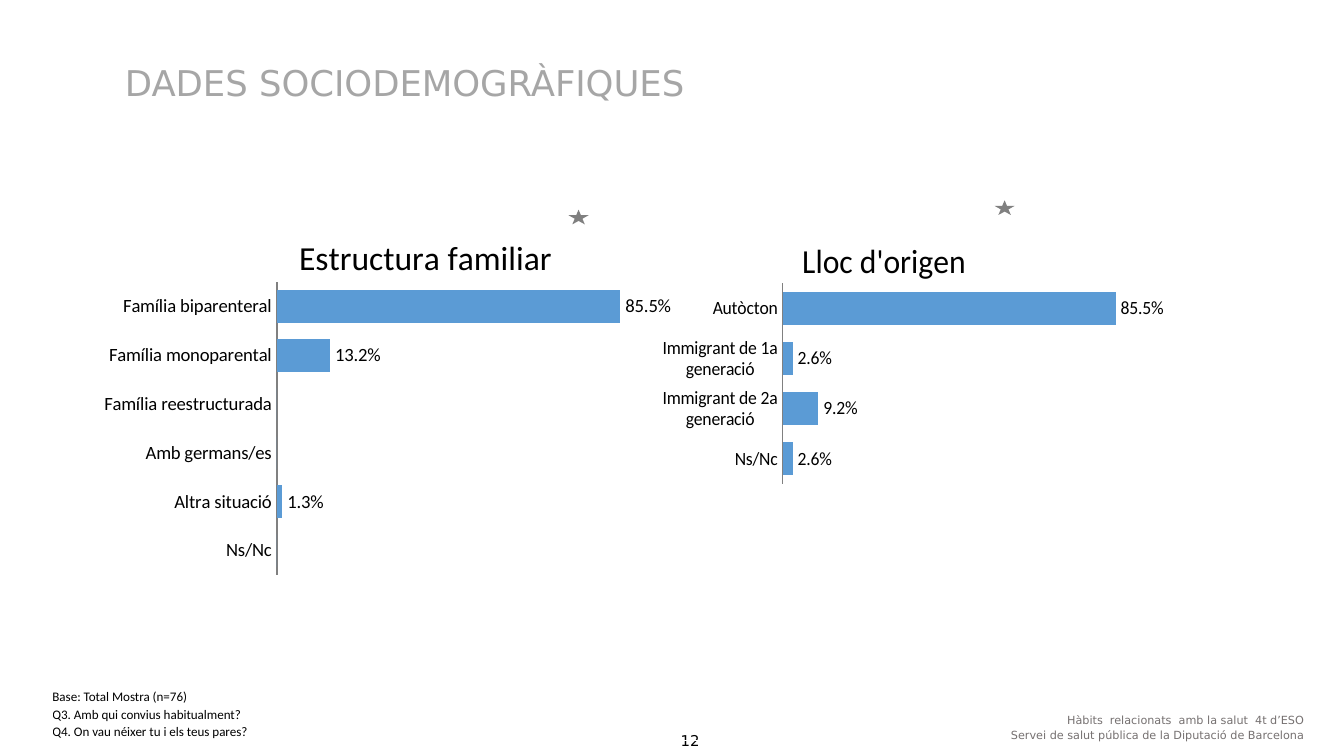
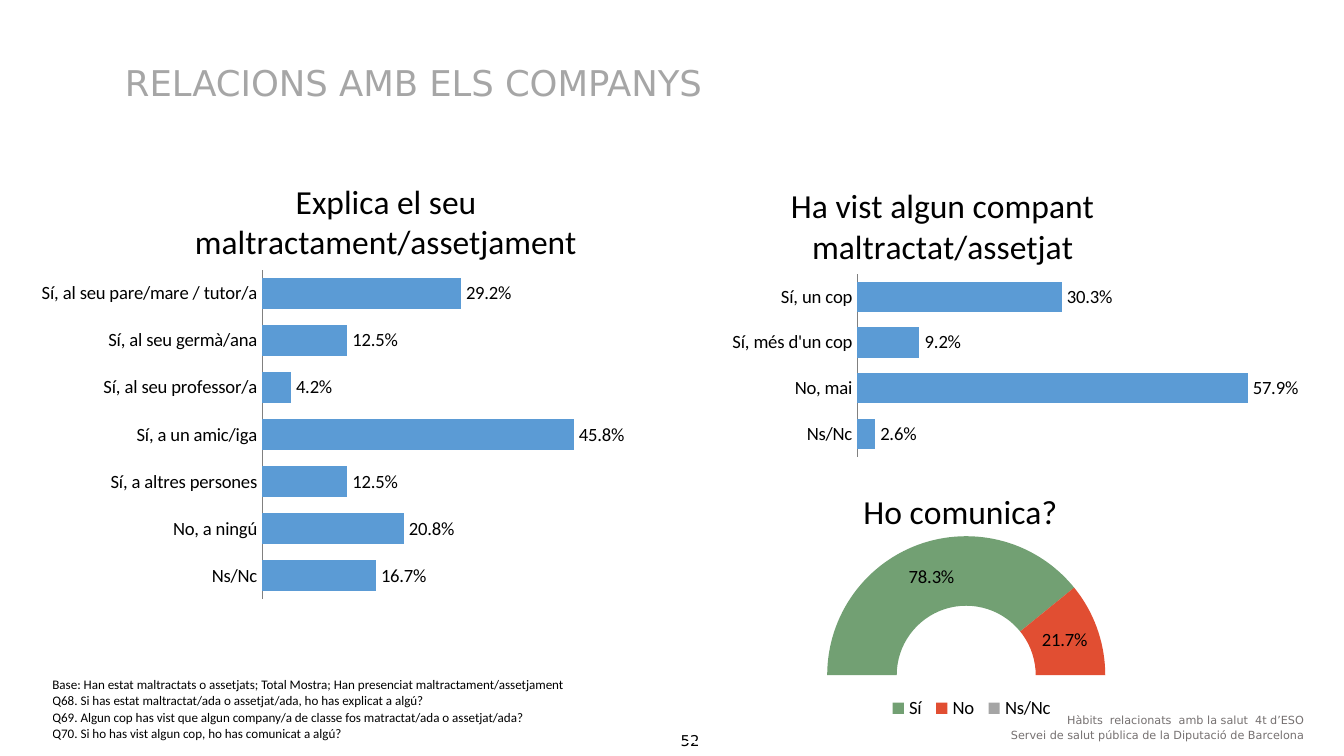
"""Builds two survey slides with bar charts, a half doughnut and source notes."""
from pptx import Presentation
from pptx.chart.data import CategoryChartData
from pptx.dml.color import RGBColor
from pptx.enum.chart import XL_CHART_TYPE as ChartType
from pptx.enum.chart import XL_LABEL_POSITION as LabelPosition
from pptx.enum.chart import XL_LEGEND_POSITION as LegendPosition
from pptx.enum.chart import XL_TICK_MARK as TickMark
from pptx.enum.shapes import MSO_SHAPE as Shape
from pptx.enum.text import MSO_ANCHOR as Anchor
from pptx.enum.text import MSO_AUTO_SIZE as AutoSize
from pptx.enum.text import PP_ALIGN as Align
from pptx.oxml import parse_xml
from pptx.oxml.ns import nsdecls
from pptx.util import Inches, Pt

BLACK = RGBColor(0x00, 0x00, 0x00)
TITLE_GRAY = RGBColor(0xA6, 0xA6, 0xA6)
FOOTER_GRAY = RGBColor(0x76, 0x71, 0x71)
MARK_GRAY = RGBColor(0x80, 0x80, 0x80)
BLUE = RGBColor(0x5B, 0x9B, 0xD5)
GREEN = RGBColor(0x72, 0xA0, 0x73)
RED = RGBColor(0xE1, 0x4E, 0x32)
NEUTRAL = RGBColor(0xA5, 0xA5, 0xA5)
SANS = "DejaVu Sans"
CHART_FONT = "Calibri"
PERCENT = "0.0%"
FOOTER_LINES = (
    "Hàbits  relacionats  amb la salut  4t d’ESO",
    "Servei de salut pública de la Diputació de Barcelona",
)


def write(frame, text, size, font=SANS, color=BLACK, align=Align.LEFT, space=0):
    paragraph = frame.paragraphs[0]
    paragraph.alignment = align
    if space:
        paragraph.space_before = paragraph.space_after = Pt(space)
    run = paragraph.add_run()
    run.text = text
    run.font.size = Pt(size)
    run.font.name = font
    run.font.bold = False
    run.font.color.rgb = color


def clear_margins(holder):
    holder.margin_left = holder.margin_right = Inches(0)
    holder.margin_top = holder.margin_bottom = Inches(0)


def set_layout(parent, index, chart_box, part_box, inner=False):
    for layout in parent.xpath("c:layout"):
        parent.remove(layout)
    left, top, width, height = chart_box
    settings = [("layoutTarget", "inner")] if inner else []
    settings += [("xMode", "edge"), ("yMode", "edge"),
                 ("x", (part_box[0] - left) / width), ("y", (part_box[1] - top) / height)]
    if len(part_box) == 4:
        settings += [("w", part_box[2] / width), ("h", part_box[3] / height)]
    body = "".join(f'<c:{name} val="{value}"/>' for name, value in settings)
    parent.insert(index, parse_xml(
        f'<c:layout {nsdecls("c")}><c:manualLayout>{body}</c:manualLayout></c:layout>'))


class Deck:
    def __init__(self):
        self.presentation = Presentation()
        self.presentation.slide_width = Inches(10)
        self.presentation.slide_height = Inches(10) * 9 // 16
        self.slide = None

    def add_slide(self, title, number):
        self.slide = self.presentation.slides.add_slide(self.presentation.slide_layouts[5])
        shape = self.slide.shapes.title
        shape.left, shape.top = Inches(0.93), Inches(0.29)
        shape.width, shape.height = Inches(8.44), Inches(0.48)
        frame = shape.text_frame
        clear_margins(frame)
        frame.auto_size = AutoSize.NONE
        frame.vertical_anchor = Anchor.BOTTOM
        write(frame, title, 19, color=TITLE_GRAY, space=3)
        self.add_text(number, (0.43, 5.44, 9.41, 0.13), size=8, align=Align.CENTER)
        for index, line in enumerate(FOOTER_LINES):
            self.add_text(line, (6.65, 5.31 + 0.11 * index, 3.05, 0.1),
                          size=6, color=FOOTER_GRAY, align=Align.RIGHT)

    def add_text(self, text, box, **style):
        frame = self.slide.shapes.add_textbox(*map(Inches, box)).text_frame
        frame.word_wrap = True
        frame.auto_size = AutoSize.SHAPE_TO_FIT_TEXT
        clear_margins(frame)
        write(frame, text, **style)

    def add_star(self, left, top):
        star = self.slide.shapes.add_shape(
            Shape.STAR_5_POINT, Inches(left), Inches(top), Inches(0.15), Inches(0.11))
        star.shadow.inherit = False
        star.fill.solid()
        star.fill.fore_color.rgb = MARK_GRAY
        star.line.fill.background()

    def add_notes_table(self, top, row_height, lines):
        table = self.slide.shapes.add_table(
            len(lines), 1, Inches(0.39), Inches(top), Inches(5.91),
            Inches(row_height * len(lines))).table
        table.first_row = table.horz_banding = False
        for row, line in zip(table.rows, lines):
            row.height = Inches(row_height)
            cell = row.cells[0]
            cell.fill.background()
            clear_margins(cell)
            cell.vertical_anchor = Anchor.BOTTOM
            write(cell.text_frame, line, 7, font=CHART_FONT)

    def add_chart(self, kind, title, box, title_at, plot_box, values, unlabelled):
        data = CategoryChartData(number_format=PERCENT)
        data.categories = list(values)
        data.add_series("Series 1", list(values.values()))
        chart = self.slide.shapes.add_chart(kind, *map(Inches, box), data).chart
        chart.font.size = Pt(10)
        chart.font.name = CHART_FONT
        chart.font.color.rgb = BLACK
        chart.has_legend = False
        chart.has_title = True
        write(chart.chart_title.text_frame, title, 18, font=CHART_FONT, align=Align.CENTER)
        chart_space = chart._chartSpace
        set_layout(chart_space.xpath("c:chart/c:title")[0], 1, box, title_at)
        set_layout(chart_space.xpath("c:chart/c:plotArea")[0], 0, box, plot_box, inner=True)
        labels = chart.plots[0].series[0].data_labels
        labels.show_value = True
        labels.number_format = PERCENT
        labels.number_format_is_linked = False
        for position, index in enumerate(unlabelled):
            labels._element.insert(position, parse_xml(
                f'<c:dLbl {nsdecls("c")}><c:idx val="{index}"/><c:delete val="1"/></c:dLbl>'))
        return chart

    def add_bars(self, title, box, title_at, plot_box, values):
        zeros = [index for index, value in enumerate(values.values()) if not value]
        chart = self.add_chart(ChartType.BAR_CLUSTERED, title, box, title_at,
                               plot_box, values, zeros)
        plot = chart.plots[0]
        plot.gap_width = 50
        plot.vary_by_categories = False
        series = plot.series[0]
        series.format.fill.solid()
        series.format.fill.fore_color.rgb = BLUE
        series.data_labels.position = LabelPosition.OUTSIDE_END
        axis = chart.category_axis
        axis.reverse_order = True
        axis.major_tick_mark = axis.minor_tick_mark = TickMark.NONE
        axis.format.line.color.rgb = MARK_GRAY
        axis.format.line.width = Pt(0.75)
        chart.value_axis.has_major_gridlines = False
        chart.value_axis.tick_labels.number_format = PERCENT
        chart.value_axis.tick_labels.number_format_is_linked = False
        chart.value_axis.visible = False

    def add_half_doughnut(self, title, box, title_at, plot_box, legend_box, values, colors):
        total = len(values)
        chart = self.add_chart(ChartType.DOUGHNUT, title, box, title_at, plot_box,
                               {**values, "Total": 1}, [total - 1, total])
        plot = chart.plots[0]
        plot.vary_by_categories = True
        doughnut = plot._element
        for tag, value in (("firstSliceAng", 270), ("holeSize", 50)):
            for setting in doughnut.xpath(f"c:{tag}"):
                doughnut.remove(setting)
            doughnut.append(parse_xml(f'<c:{tag} {nsdecls("c")} val="{value}"/>'))
        points = plot.series[0].points
        for index, color in enumerate(colors):
            points[index].format.fill.solid()
            points[index].format.fill.fore_color.rgb = color
        points[total].format.fill.background()
        points[total].format.line.fill.background()
        chart.has_legend = True
        legend = chart.legend
        legend.position = LegendPosition.BOTTOM
        legend.include_in_layout = False
        legend._element.insert(1, parse_xml(
            f'<c:legendEntry {nsdecls("c")}><c:idx val="{total}"/>'
            '<c:delete val="1"/></c:legendEntry>'))
        set_layout(legend._element, 2, box, legend_box)


def build_demographics(deck):
    deck.add_slide("DADES SOCIODEMOGRÀFIQUES", "12")
    deck.add_bars(
        "Estructura familiar", (0.43, 1.61, 4.72, 2.76), (2.18, 1.7),
        (2.06, 2.1, 2.69, 2.18),
        {"Família biparenteral": 0.855, "Família monoparental": 0.132,
         "Família reestructurada": 0, "Amb germans/es": 0,
         "Altra situació": 0.013, "Ns/Nc": 0})
    deck.add_bars(
        "Lloc d'origen", (4.72, 1.61, 3.94, 2.4), (6, 1.72),
        (5.89, 2.11, 2.77, 1.49),
        {"Autòcton": 0.855, "Immigrant de 1a generació": 0.026,
         "Immigrant de 2a generació": 0.092, "Ns/Nc": 0.026})
    deck.add_notes_table(5.12, 0.13, (
        "Base: Total Mostra (n=76)",
        "Q3. Amb qui convius habitualment?",
        "Q4. On vau néixer tu i els teus pares?"))
    deck.add_star(4.23, 1.56)
    deck.add_star(7.4, 1.49)


def build_relations(deck):
    deck.add_slide("RELACIONS AMB ELS COMPANYS", "52")
    deck.add_bars(
        "Explica el seu maltractament/assetjament", (0.31, 1.22, 4.57, 3.46), (1.31, 1.28),
        (1.94, 2.01, 2.54, 2.45),
        {"Sí, al seu pare/mare / tutor/a": 0.292, "Sí, al seu germà/ana": 0.125,
         "Sí, al seu professor/a": 0.042, "Sí, a un amic/iga": 0.458,
         "Sí, a altres persones": 0.125, "No, a ningú": 0.208, "Ns/Nc": 0.167})
    deck.add_bars(
        "Ha vist algun compant maltractat/assetjat", (5.31, 1.3, 4.58, 2.24), (5.84, 1.31),
        (6.38, 2.04, 3.51, 1.36),
        {"Sí, un cop": 0.303, "Sí, més d'un cop": 0.092,
         "No, mai": 0.579, "Ns/Nc": 0.026})
    deck.add_half_doughnut(
        "Ho comunica?", (4.76, 3.54, 4.53, 2.52), (6.38, 3.59),
        (6.04, 3.99, 2.3, 2.07), (6.58, 5.17, 1.3, 0.2),
        {"Sí": 0.783, "No": 0.217, "Ns/Nc": 0}, (GREEN, RED, NEUTRAL))
    deck.add_notes_table(5.04, 0.12, (
        "Base: Han estat maltractats o assetjats; Total Mostra; "
        "Han presenciat maltractament/assetjament",
        "Q68. Si has estat maltractat/ada o assetjat/ada, ho has explicat a algú?",
        "Q69. Algun cop has vist que algun company/a de classe fos "
        "matractat/ada o assetjat/ada?",
        "Q70. Si ho has vist algun cop, ho has comunicat a algú?"))


def main():
    deck = Deck()
    build_demographics(deck)
    build_relations(deck)
    deck.presentation.save("out.pptx")


if __name__ == "__main__":
    main()
